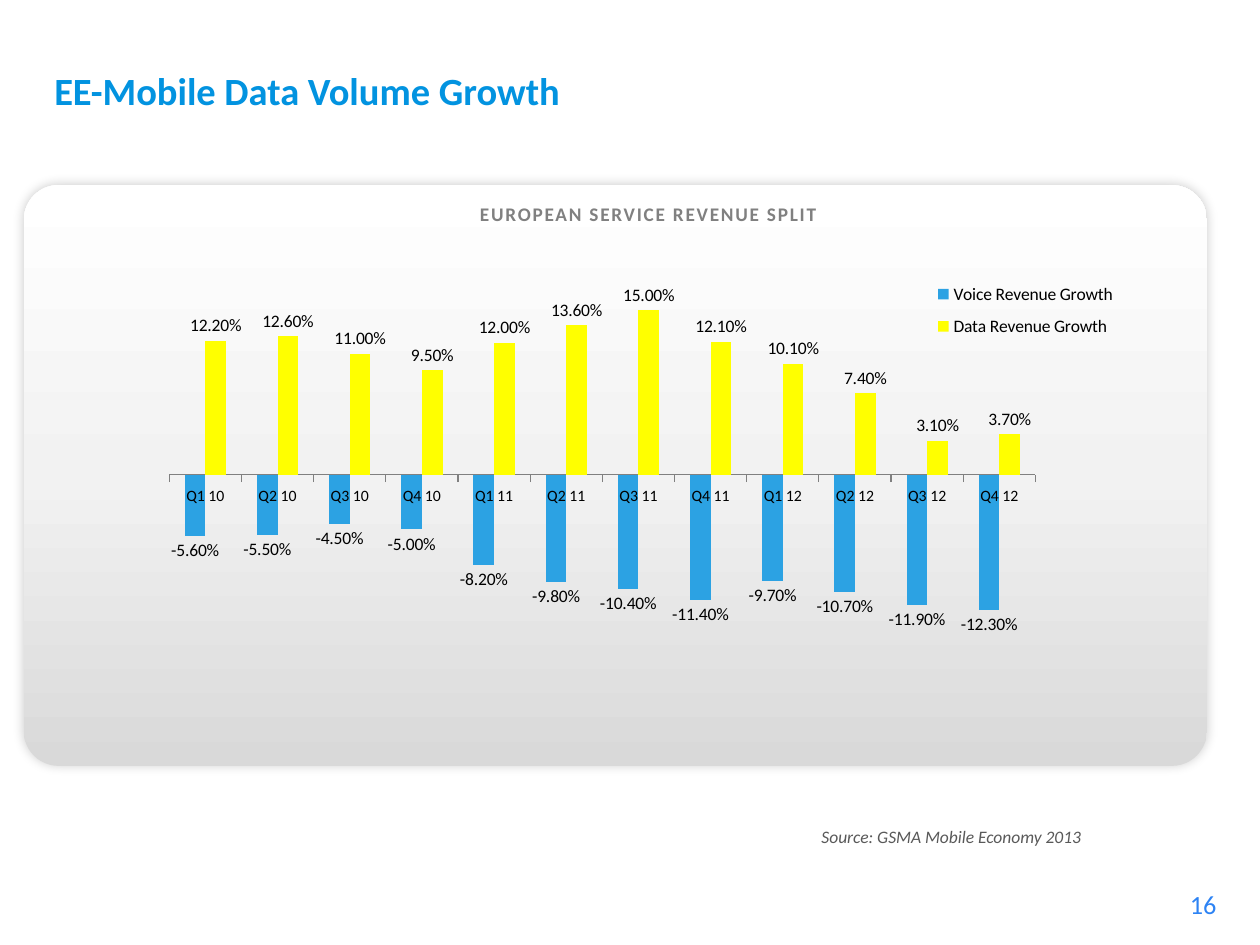
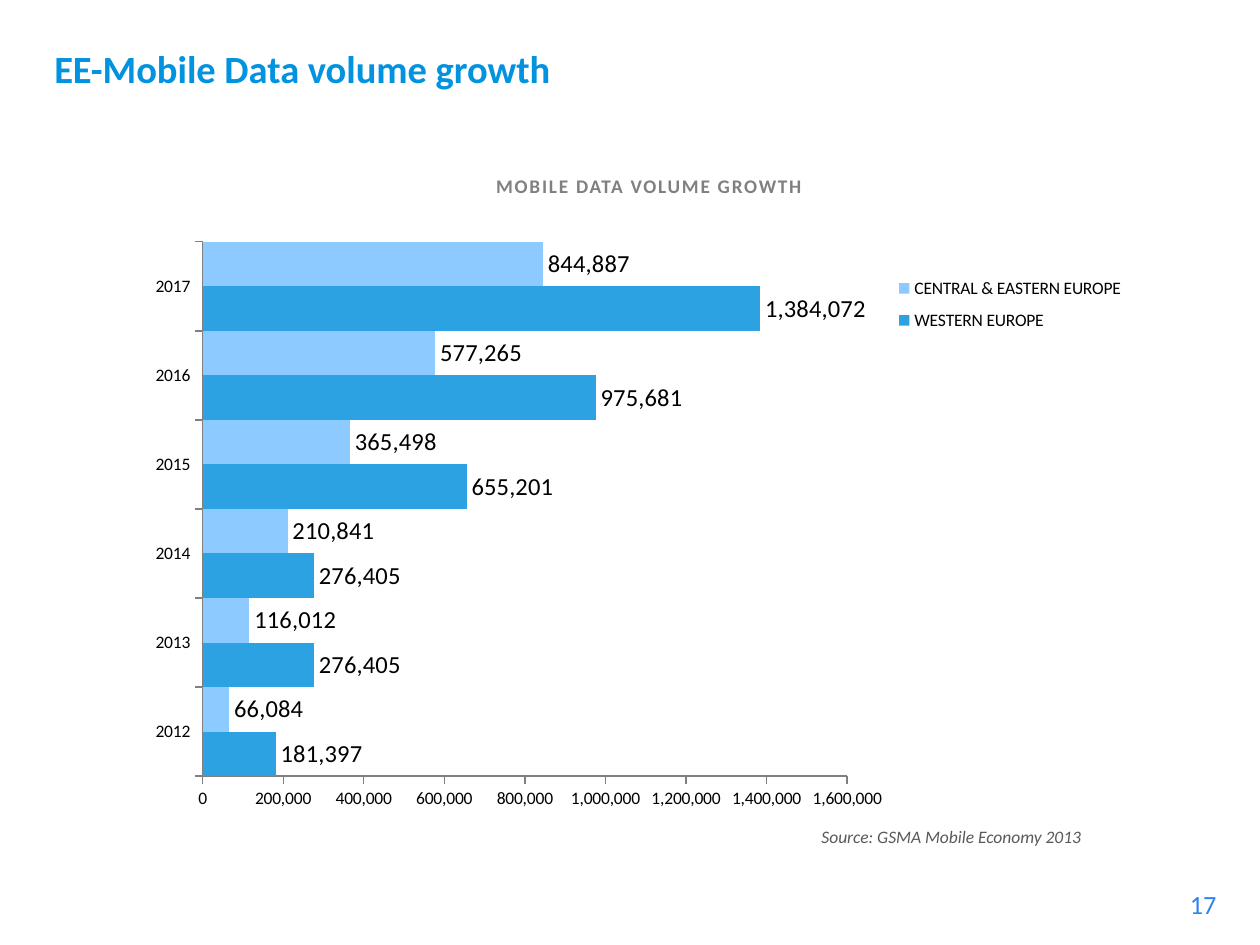
from lxml import etree
from pptx import Presentation
from pptx.chart.data import CategoryChartData
from pptx.dml.color import RGBColor
from pptx.enum.chart import XL_CHART_TYPE, XL_LABEL_POSITION, XL_LEGEND_POSITION, XL_TICK_MARK
from pptx.enum.shapes import MSO_SHAPE
from pptx.enum.text import MSO_ANCHOR, PP_ALIGN
from pptx.oxml import parse_xml
from pptx.oxml.ns import nsdecls, qn
from pptx.util import Cm, Pt

COLUMN = XL_CHART_TYPE.COLUMN_CLUSTERED
BAR = XL_CHART_TYPE.BAR_CLUSTERED
OUTSIDE = XL_LABEL_POSITION.OUTSIDE_END
RIGHT = XL_LEGEND_POSITION.RIGHT
TICK_OUT, TICK_NONE = XL_TICK_MARK.OUTSIDE, XL_TICK_MARK.NONE
ROUND = MSO_SHAPE.ROUNDED_RECTANGLE
MIDDLE, TOP = MSO_ANCHOR.MIDDLE, MSO_ANCHOR.TOP
ALIGN_L, ALIGN_C, ALIGN_R = PP_ALIGN.LEFT, PP_ALIGN.CENTER, PP_ALIGN.RIGHT

BLACK = RGBColor(0x00, 0x00, 0x00)
BLUE = RGBColor(0x02, 0x93, 0xE0)
LINK = RGBColor(0x2D, 0x83, 0xF4)
GREY = RGBColor(0x80, 0x80, 0x80)
DARK = RGBColor(0x59, 0x59, 0x59)
SKY = RGBColor(0x2C, 0xA2, 0xE3)
PALE = RGBColor(0x8C, 0xCA, 0xFF)
YELLOW = RGBColor(0xFF, 0xFF, 0x00)
SHADES = {0: "D9D9D9", 50: "F2F2F2", 100: "FFFFFF"}

FACE = "Calibri"
TITLE = {"name": FACE, "size": Pt(22), "bold": True}
HEAD = {"name": FACE, "size": Pt(11), "bold": True}
SOURCE = {"name": FACE, "size": Pt(10), "italic": True}
NUMBER = {"name": FACE, "size": Pt(15)}

VOICE = (-0.056, -0.055, -0.045, -0.05, -0.082, -0.098,
         -0.104, -0.114, -0.097, -0.107, -0.119, -0.123)
DATA = (0.122, 0.126, 0.11, 0.095, 0.12, 0.136,
        0.15, 0.121, 0.101, 0.074, 0.031, 0.037)
WEST = (181397, 276405, 276405, 655201, 975681, 1384072)
EAST = (66084, 116012, 210841, 365498, 577265, 844887)

SPLIT = {
    "kind": COLUMN, "cats": [f"Q{q} {y}" for y in (10, 11, 12) for q in (1, 2, 3, 4)],
    "rows": (("Voice Revenue Growth", VOICE, SKY), ("Data Revenue Growth", DATA, YELLOW)),
    "scale": {"minimum_scale": -0.15, "maximum_scale": 0.2, "visible": False},
    "mask": "0.00%", "gap": 150, "cat": 9, "label": 10,
    "plot": (0.095, 0.051, 0.774, 0.897), "legend": (0.76, 0.09, 0.2, 0.18),
}
VOLUME = {
    "kind": BAR, "cats": [str(y) for y in range(2012, 2018)],
    "rows": (("WESTERN EUROPE", WEST, SKY), ("CENTRAL & EASTERN EUROPE", EAST, PALE)),
    "scale": {"minimum_scale": 0, "maximum_scale": 1600000, "major_unit": 200000,
              "major_tick_mark": TICK_OUT},
    "mask": "#,##0", "gap": 0, "cat": 10, "label": 14,
    "plot": (0.066, 0.019, 0.638, 0.906), "legend": (0.74, 0.06, 0.25, 0.13),
}


def apply(item, values):
    for key, value in values.items():
        setattr(item, key, value)


def paint(font, look, color):
    apply(font, look)
    font.color.rgb = color


def write(frame, text, look, color, align, anchor, wrap=True):
    apply(frame, {"text": text, "word_wrap": wrap, "vertical_anchor": anchor})
    line = frame.paragraphs[0]
    line.alignment = align
    paint(line.runs[0].font, look, color)
    return line.runs[0]


def add_text(slide, box, *rest):
    frame = slide.shapes.add_textbox(*map(Cm, box)).text_frame
    return write(frame, *rest)


def add_base(deck, title, top, number):
    slide = deck.slides.add_slide(deck.slide_layouts[5])
    head = slide.shapes.title
    place = zip(("left", "top", "width", "height"), map(Cm, (0.84, top, 19.25, 2.34)))
    apply(head, dict(place))
    write(head.text_frame, title, TITLE, BLUE, ALIGN_L, MIDDLE)
    add_text(slide, (18.85, 17.78, 5.92, 1.02), str(number), NUMBER, LINK, ALIGN_R, TOP)
    add_text(slide, (16.31, 16.51, 6.1, 0.69), "Source: GSMA Mobile Economy 2013",
             SOURCE, DARK, ALIGN_L, MIDDLE, False)
    return slide


def add_head(slide, box, text):
    run = add_text(slide, box, text, HEAD, GREY, ALIGN_C, TOP, False)
    run.font._element.set("spc", "100")


def add_card(slide, box):
    card = slide.shapes.add_shape(ROUND, *map(Cm, box))
    card.adjustments[0] = 0.06
    card.line.fill.background()
    card.shadow.inherit = False
    stops = "".join(f'<a:gs pos="{pos * 1000}"><a:srgbClr val="{tone}"/></a:gs>'
                    for pos, tone in SHADES.items())
    props = card.element.spPr
    props.find(qn("a:prstGeom")).addnext(parse_xml(
        f'<a:gradFill {nsdecls("a")} rotWithShape="1"><a:gsLst>{stops}</a:gsLst>'
        '<a:lin ang="16200000" scaled="0"/></a:gradFill>'))
    props.find(qn("a:effectLst")).append(parse_xml(
        f'<a:outerShdw {nsdecls("a")} blurRad="{Pt(6)}" dist="0" dir="13500000">'
        '<a:srgbClr val="000000"><a:alpha val="20000"/></a:srgbClr></a:outerShdw>'))


def make_layout(parts, inner):
    layout = etree.Element(qn("c:layout"))
    manual = etree.SubElement(layout, qn("c:manualLayout"))
    pairs = [("layoutTarget", "inner")] if inner else []
    pairs += [("xMode", "edge"), ("yMode", "edge"), *zip("xywh", parts)]
    for tag, value in pairs:
        etree.SubElement(manual, qn(f"c:{tag}")).set("val", str(value))
    return layout


def place_parts(chart, plot, legend):
    area = chart.element.find(".//" + qn("c:plotArea"))
    key = chart.element.find(".//" + qn("c:legend"))
    for part in (area, key):
        for old in part.findall(qn("c:layout")):
            part.remove(old)
    area.insert(0, make_layout(plot, True))
    key.find(qn("c:legendPos")).addnext(make_layout(legend, False))


def add_graph(slide, box, spec_):
    data = CategoryChartData(number_format=spec_["mask"])
    data.categories = spec_["cats"]
    for name, values, _ in spec_["rows"]:
        data.add_series(name, values)
    chart = slide.shapes.add_chart(spec_["kind"], *map(Cm, box), data).chart
    apply(chart, {"has_title": False, "has_legend": True})
    paint(chart.font, {"name": FACE, "size": Pt(10)}, BLACK)
    apply(chart.legend, {"position": RIGHT, "include_in_layout": False})
    place_parts(chart, spec_["plot"], spec_["legend"])

    plain = {"has_major_gridlines": False, "major_tick_mark": TICK_OUT,
             "minor_tick_mark": TICK_NONE}
    for axis in (chart.category_axis, chart.value_axis):
        apply(axis, plain)
        axis.format.line.color.rgb = GREY
    chart.category_axis.tick_labels.font.size = Pt(spec_["cat"])
    apply(chart.value_axis, spec_["scale"])
    mask = {"number_format": spec_["mask"], "number_format_is_linked": False}
    apply(chart.value_axis.tick_labels, mask)

    plot = chart.plots[0]
    apply(plot, {"gap_width": spec_["gap"], "overlap": 0, "vary_by_categories": False})
    for row, (_, _, color) in zip(plot.series, spec_["rows"]):
        row.invert_if_negative = False
        row.format.fill.solid()
        row.format.fill.fore_color.rgb = color
        labels = row.data_labels
        apply(labels, {"show_value": True, "position": OUTSIDE, **mask})
        paint(labels.font, {"name": FACE, "size": Pt(spec_["label"])}, BLACK)


def add_split(deck):
    slide = add_base(deck, "EE-Mobile Data Volume Growth", 0.64, 16)
    add_card(slide, (0.48, 3.73, 23.85, 11.71))
    add_graph(slide, (1.27, 4.7, 22.56, 8.64), SPLIT)
    add_head(slide, (9.3, 3.96, 7.54, 0.74), "EUROPEAN SERVICE REVENUE SPLIT")


def add_volume(deck):
    slide = add_base(deck, "EE-Mobile Data volume growth", 0.2, 17)
    add_graph(slide, (2.74, 4.65, 20.37, 11.89), VOLUME)
    add_head(slide, (9.53, 3.38, 7.11, 0.74), "MOBILE DATA VOLUME GROWTH")


def main():
    deck = Presentation()
    apply(deck, {"slide_width": Cm(25.4), "slide_height": Cm(19.05)})
    add_split(deck)
    add_volume(deck)
    deck.save("out.pptx")


if __name__ == "__main__":
    main()
